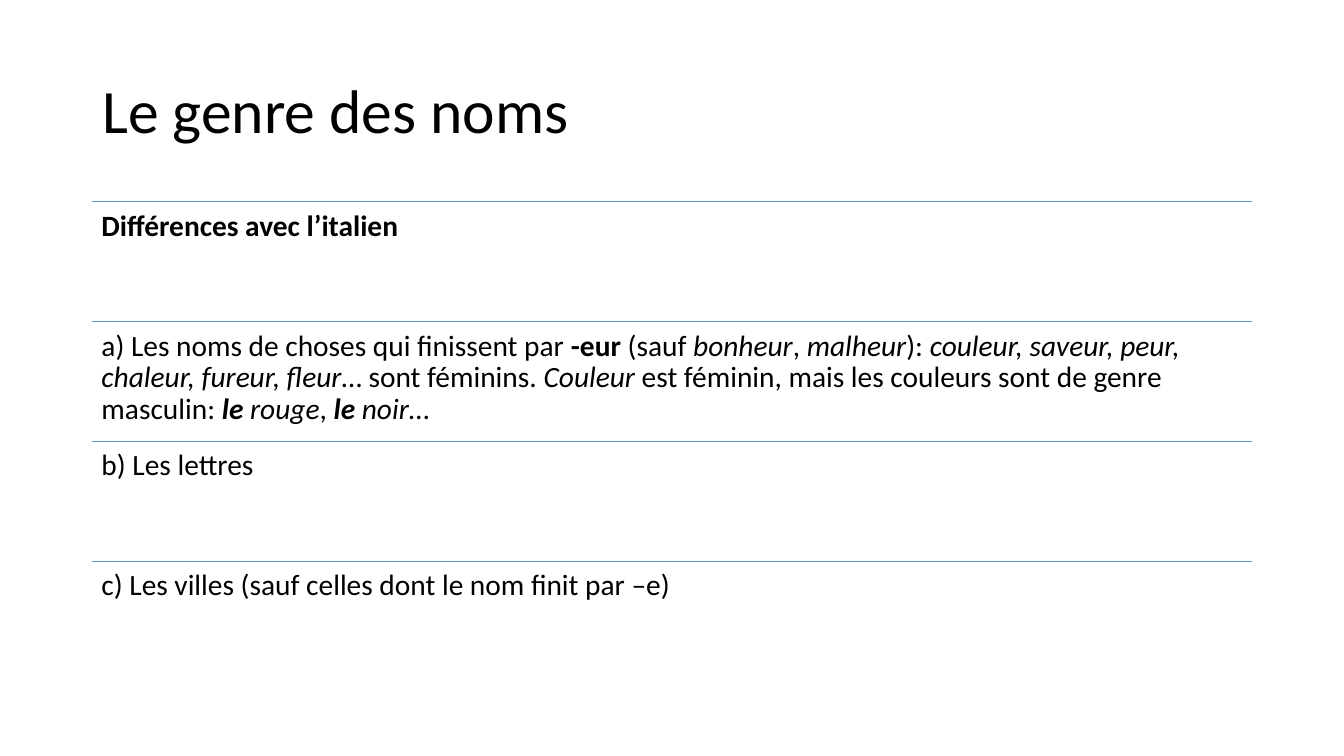
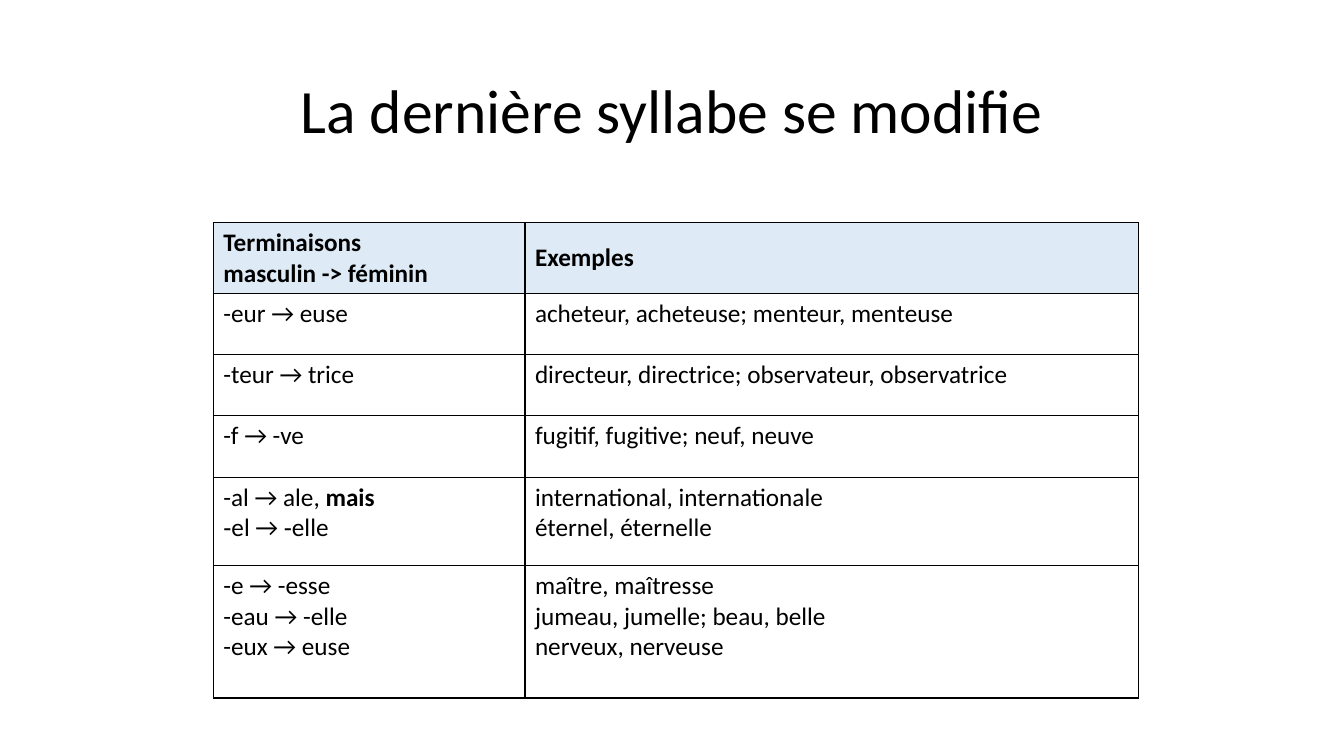
from dataclasses import dataclass

from lxml.etree import SubElement
from pptx import Presentation
from pptx.dml.color import RGBColor
from pptx.enum.shapes import MSO_CONNECTOR
from pptx.enum.text import MSO_ANCHOR, PP_ALIGN
from pptx.oxml.ns import qn
from pptx.util import Inches, Pt


@dataclass(frozen=True)
class Theme:
    font: str = "Calibri"
    ink: RGBColor = RGBColor(0x00, 0x00, 0x00)
    rule: RGBColor = RGBColor(0x5B, 0x9B, 0xD5)
    header: RGBColor = RGBColor(0xDE, 0xEB, 0xF7)
    paper: RGBColor = RGBColor(0xFF, 0xFF, 0xFF)
    title_size: int = 44
    body_size: int = 21
    table_size: int = 18
    line_width: int = 1


THEME = Theme()

prs = Presentation()
prs.slide_width, prs.slide_height = Inches(13.333), Inches(7.5)
blank = prs.slide_layouts[6]

# The slide is a grid of 160 columns by 90 rows
COL, ROW = prs.slide_width / 160, prs.slide_height / 90
LEFT, WIDTH = 11, 138


def write(tf, lines, size, bold=False, align=PP_ALIGN.LEFT, spacing=1.0):
    """Fill a text frame; a line is a string or a list of (text, style), style made of b and i."""
    tf.word_wrap = True
    for n, line in enumerate(lines):
        p = tf.paragraphs[0] if n == 0 else tf.add_paragraph()
        p.alignment, p.line_spacing = align, spacing
        p.font.name, p.font.size, p.font.bold = THEME.font, Pt(size), bold
        p.font.color.rgb = THEME.ink
        for text, style in [(line, "")] if isinstance(line, str) else line:
            r = p.add_run()
            r.text = text
            if "b" in style:
                r.font.bold = True
            if "i" in style:
                r.font.italic = True


def add_text(s, top, height, line, size, **style):
    """Place one paragraph across the content width and return its text frame."""
    box = s.shapes.add_textbox(int(LEFT * COL), int(top * ROW), int(WIDTH * COL), int(height * ROW))
    write(box.text_frame, [line], size, spacing=0.9, **style)
    return box.text_frame


titles = [("Le genre des noms", PP_ALIGN.LEFT), ("La dernière syllabe se modifie", PP_ALIGN.CENTER)]
slides = []
for title, align in titles:
    s = prs.slides.add_slide(blank)
    tf = add_text(s, 4.8, 17.4, title, THEME.title_size, align=align)
    tf.vertical_anchor = MSO_ANCHOR.MIDDLE
    slides.append(s)
rules_slide, endings_slide = slides

# Slide 1: ruled list
LIST_TOP, BAND = 24, 14.28
differences = [
    [("Différences avec l’italien", "b")],
    [
        ("a) Les noms de choses qui finissent par ", ""), ("-eur ", "b"), ("(sauf ", ""),
        ("bonheur", "i"), (", ", ""), ("malheur", "i"), ("): ", ""),
        ("couleur, saveur, peur, chaleur, fureur, fleur", "i"), ("… sont féminins. ", ""),
        ("Couleur", "i"), (" est féminin, mais les couleurs sont de genre masculin: ", ""),
        ("le", "bi"), (" rouge", "i"), (", ", ""), ("le", "bi"), (" noir", "i"), ("…", ""),
    ],
    "b) Les lettres",
    "c) Les villes (sauf celles dont le nom finit par –e)",
]
for n, line in enumerate(differences):
    top = LIST_TOP + n * BAND
    y = int(top * ROW)
    rule = rules_slide.shapes.add_connector(
        MSO_CONNECTOR.STRAIGHT, int(LEFT * COL), y, int((LEFT + WIDTH) * COL), y)
    rule.line.color.rgb, rule.line.width = THEME.rule, Pt(THEME.line_width)
    SubElement(rule._element.spPr, qn("a:effectLst"))
    tf = add_text(rules_slide, top, BAND, line, THEME.body_size)
    tf.margin_left = tf.margin_right = tf.margin_top = tf.margin_bottom = Inches(0.09)

# Slide 2: table of endings
TABLE_LEFT, TABLE_TOP = 25.4, 26.5
col_widths = [37.1, 73]
row_heights = [8.4, 7.3, 7.3, 7.3, 10.5, 15.8]
endings = [
    (["Terminaisons", "masculin -> féminin"], ["Exemples"]),
    (["-eur → euse"], ["acheteur, acheteuse; menteur, menteuse"]),
    (["-teur → trice"], ["directeur, directrice; observateur, observatrice"]),
    (["-f → -ve"], ["fugitif, fugitive; neuf, neuve"]),
    ([[("-al → ale, ", ""), ("mais", "b")], "‑el → ‑elle"],
     ["international, internationale", "éternel, éternelle"]),
    (["-e → -esse", "-eau → -elle", "-eux → euse"],
     ["maître, maîtresse", "jumeau, jumelle; beau, belle", "nerveux, nerveuse"]),
]
table = endings_slide.shapes.add_table(
    len(endings), len(col_widths), int(TABLE_LEFT * COL), int(TABLE_TOP * ROW),
    int(sum(col_widths) * COL), int(sum(row_heights) * ROW)).table
table.first_row = table.horz_banding = False
for column, width in zip(table.columns, col_widths):
    column.width = int(width * COL)
for row, height in zip(table.rows, row_heights):
    row.height = int(height * ROW)

for i, texts in enumerate(endings):
    is_header = i == 0
    for j, lines in enumerate(texts):
        cell = table.cell(i, j)
        write(cell.text_frame, lines, THEME.table_size, bold=is_header)
        cell.vertical_anchor = MSO_ANCHOR.MIDDLE if is_header else MSO_ANCHOR.TOP
        tc_pr = cell._tc.get_or_add_tcPr()
        for side in ("lnL", "lnR", "lnT", "lnB"):
            border = SubElement(tc_pr, qn(f"a:{side}"), w=str(Pt(THEME.line_width)))
            fill = SubElement(border, qn("a:solidFill"))
            SubElement(fill, qn("a:srgbClr"), val=str(THEME.ink))
        cell.fill.solid()
        cell.fill.fore_color.rgb = THEME.header if is_header else THEME.paper

prs.save("out.pptx")
